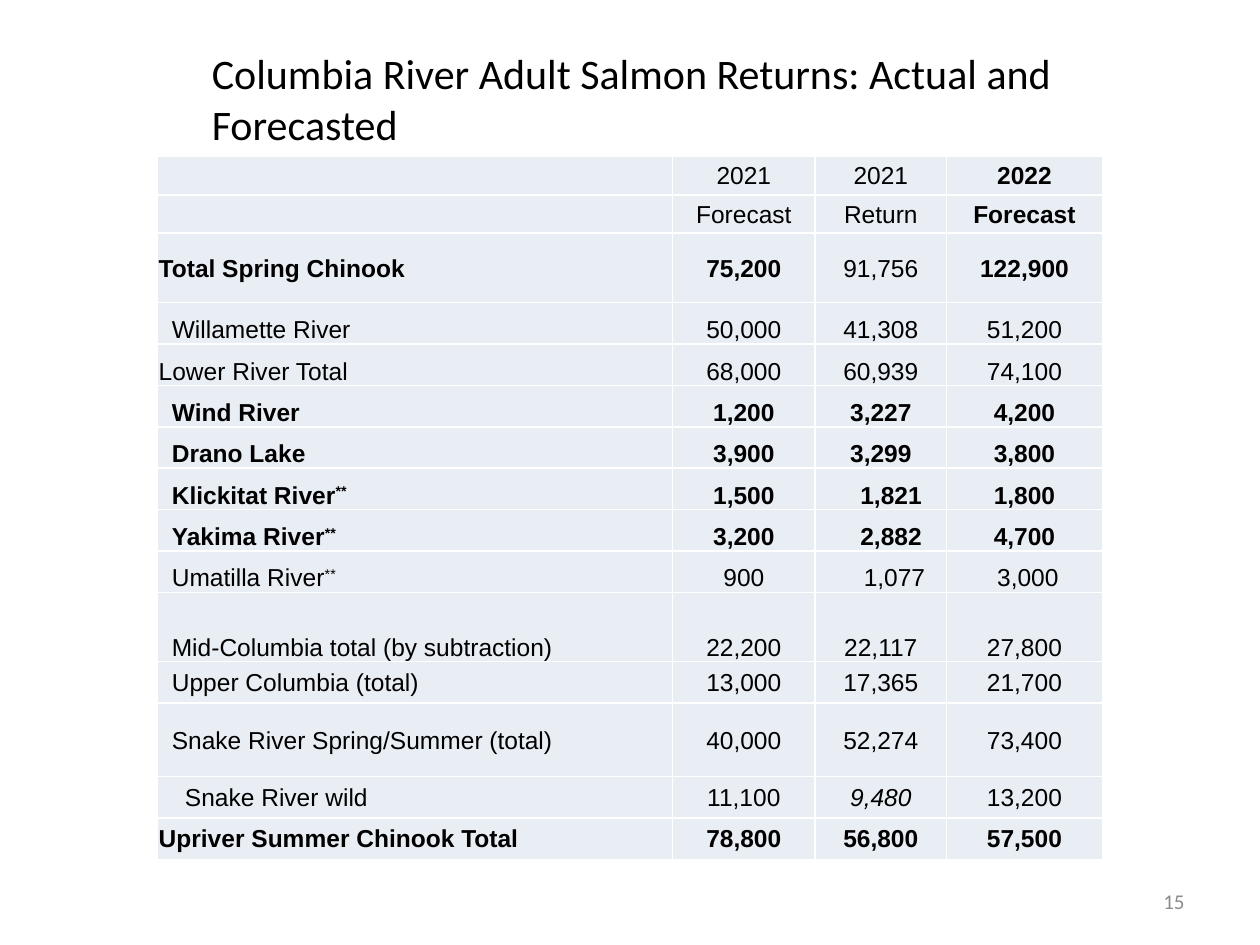
from dataclasses import dataclass

from lxml import etree
from pptx import Presentation
from pptx.dml.color import RGBColor
from pptx.enum.text import MSO_ANCHOR, MSO_AUTO_SIZE, PP_ALIGN
from pptx.oxml.ns import qn
from pptx.util import Pt

LEFT, CENTER, RIGHT = PP_ALIGN.LEFT, PP_ALIGN.CENTER, PP_ALIGN.RIGHT
TOP, MIDDLE, BOTTOM = MSO_ANCHOR.TOP, MSO_ANCHOR.MIDDLE, MSO_ANCHOR.BOTTOM
GROW = MSO_AUTO_SIZE.SHAPE_TO_FIT_TEXT
TITLE_ONLY = 5


@dataclass(frozen=True)
class Theme:
    heading_font: str = "Calibri"
    table_font: str = "Arial"
    text: str = "000000"
    muted: str = "8C8C8C"
    cell: str = "E9EDF4"
    border: str = "FFFFFF"
    title_size: float = 24
    table_size: float = 14
    number_size: float = 12
    border_width: float = 1


THEME = Theme()

TITLE = "Columbia River Adult Salmon Returns: Actual and Forecasted"
PAGE_NUMBER = "15"
TITLE_BOX = (113.8, 23.8, 522, 65.5)
NUMBER_BOX = (516, 500.5, 168, 28.8)
TABLE_ORIGIN = (90, 89.5)
COLUMN_WIDTHS = (294.4, 81.4, 75.2, 89)
HEADER, NORMAL, TALL, TALLEST = 21.9, 23.65, 39.7, 42.1
CELL_MARGIN = 0.7
LEVEL_INDENT = 7.5

# Label, values, bold columns, label level, anchor, row height
ROWS = [
    ("", ("2021", "2021", "2022"), (3,), 0, MIDDLE, HEADER),
    ("", ("Forecast", "Return", "Forecast"), (3,), 0, MIDDLE, HEADER),
    ("Total Spring Chinook", ("75,200", "91,756", "122,900"), (0, 1, 3), 0, MIDDLE, TALL),
    ("Willamette River", ("50,000", "41,308", "51,200"), (), 1, BOTTOM, NORMAL),
    ("Lower River Total", ("68,000", "60,939", "74,100"), (), 0, BOTTOM, NORMAL),
    ("Wind River", ("1,200", "3,227", "4,200"), (0, 1, 2, 3), 1, BOTTOM, NORMAL),
    ("Drano Lake", ("3,900", "3,299", "3,800"), (0, 1, 2, 3), 1, BOTTOM, NORMAL),
    ("Klickitat River**", ("1,500", "1,821", "1,800"), (0, 1, 2, 3), 1, BOTTOM, NORMAL),
    ("Yakima River**", ("3,200", "2,882", "4,700"), (0, 1, 2, 3), 1, BOTTOM, NORMAL),
    ("Umatilla River**", ("900", "1,077", "3,000"), (), 1, BOTTOM, NORMAL),
    ("Mid-Columbia total (by subtraction)", ("22,200", "22,117", "27,800"), (), 1, BOTTOM, TALL),
    ("Upper Columbia (total)", ("13,000", "17,365", "21,700"), (), 1, MIDDLE, NORMAL),
    ("Snake River Spring/Summer (total)", ("40,000", "52,274", "73,400"), (), 1, MIDDLE, TALLEST),
    ("Snake River wild", ("11,100", "9,480", "13,200"), (), 2, MIDDLE, NORMAL),
    ("Upriver Summer Chinook Total", ("78,800", "56,800", "57,500"), (0, 1, 2, 3), 0, MIDDLE, NORMAL),
]
ITALIC_VALUES = {"9,480"}
VALUE_INDENTS = {"1,821": 11.7, "2,882": 11.7, "1,077": 15.6, "3,000": 3.9}


def add_run(paragraph, text, font_name, size, color, bold=False, italic=False):
    run = paragraph.add_run()
    run.text = text
    font = run.font
    font.name, font.size = font_name, Pt(size)
    font.bold, font.italic = bold, italic
    font.color.rgb = RGBColor.from_string(color)
    return run


def add_borders(cell):
    properties = cell._tc.get_or_add_tcPr()
    for side in ("a:lnL", "a:lnR", "a:lnT", "a:lnB"):
        line = etree.SubElement(properties, qn(side), w=str(Pt(THEME.border_width)))
        fill = etree.SubElement(line, qn("a:solidFill"))
        etree.SubElement(fill, qn("a:srgbClr"), val=THEME.border)


def format_cell(cell, text, anchor, alignment, indent, bold, italic):
    add_borders(cell)
    cell.fill.solid()
    cell.fill.fore_color.rgb = RGBColor.from_string(THEME.cell)
    cell.vertical_anchor = anchor
    cell.margin_left = Pt(CELL_MARGIN + indent)
    cell.margin_right = cell.margin_top = Pt(CELL_MARGIN)
    cell.margin_bottom = Pt(0)
    paragraph = cell.text_frame.paragraphs[0]
    paragraph.alignment = alignment
    style = (THEME.table_font, THEME.table_size, THEME.text, bold, italic)
    name, marker, _ = text.partition("**")
    if name:
        add_run(paragraph, name, *style)
    else:
        etree.SubElement(paragraph._p, qn("a:endParaRPr"), sz=str(THEME.table_size * 100))
    if marker:
        add_run(paragraph, marker, *style).font._element.set("baseline", "30000")


def add_returns_table(slide):
    heights = [row[-1] for row in ROWS]
    size = (sum(COLUMN_WIDTHS), sum(heights))
    frame = slide.shapes.add_table(
        len(ROWS), len(COLUMN_WIDTHS), *map(Pt, TABLE_ORIGIN + size))
    table = frame.table
    table.first_row = table.horz_banding = False
    for column, width in zip(table.columns, COLUMN_WIDTHS):
        column.width = Pt(width)
    for row_index, (label, values, bold, level, anchor, height) in enumerate(ROWS):
        table.rows[row_index].height = Pt(height)
        for column_index, text in enumerate((label, *values)):
            is_label = column_index == 0
            indent = level * LEVEL_INDENT if is_label else VALUE_INDENTS.get(text, 0)
            format_cell(table.cell(row_index, column_index), text, anchor,
                        LEFT if is_label else CENTER, indent,
                        column_index in bold, text in ITALIC_VALUES)


def fill_text(shape, box, text, anchor, alignment, size, color):
    shape.left, shape.top, shape.width, shape.height = map(Pt, box)
    frame = shape.text_frame
    frame.word_wrap = True
    frame.vertical_anchor = anchor
    paragraph = frame.paragraphs[0]
    paragraph.alignment = alignment
    add_run(paragraph, text, THEME.heading_font, size, color)


def main():
    presentation = Presentation()
    presentation.slide_width, presentation.slide_height = Pt(720), Pt(540)
    slide = presentation.slides.add_slide(presentation.slide_layouts[TITLE_ONLY])
    title = slide.shapes.title
    fill_text(title, TITLE_BOX, TITLE, TOP, LEFT, THEME.title_size, THEME.text)
    title.text_frame.auto_size = GROW
    number = slide.shapes.add_textbox(*map(Pt, NUMBER_BOX))
    fill_text(number, NUMBER_BOX, PAGE_NUMBER, MIDDLE, RIGHT, THEME.number_size, THEME.muted)
    add_returns_table(slide)
    presentation.save("out.pptx")


if __name__ == "__main__":
    main()
